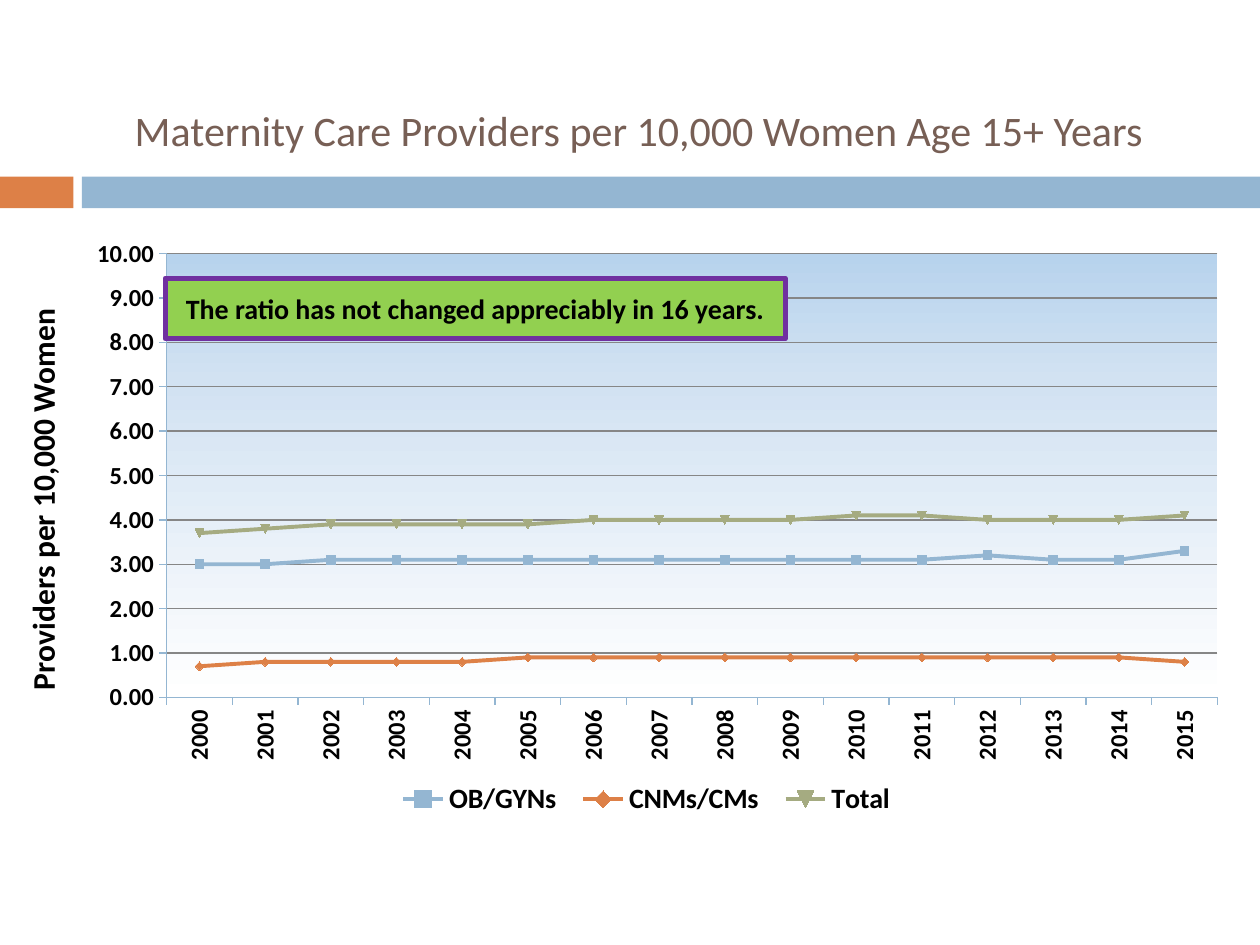
from dataclasses import dataclass

from pptx import Presentation
from pptx.chart.data import CategoryChartData
from pptx.dml.color import RGBColor
from pptx.enum.chart import XL_CHART_TYPE, XL_LEGEND_POSITION, XL_TICK_MARK
from pptx.enum.shapes import MSO_SHAPE
from pptx.enum.text import MSO_ANCHOR, PP_ALIGN
from pptx.oxml import parse_xml
from pptx.oxml.ns import nsdecls, qn
from pptx.util import Cm, Pt


@dataclass(frozen=True)
class Theme:
    font: str = "Calibri"
    title: str = "775F55"
    text: str = "000000"
    blue: str = "94B6D2"
    orange: str = "DD8047"
    olive: str = "A5AB81"
    grid: str = "868686"
    callout: str = "92D050"
    callout_line: str = "7030A0"
    plot_stops: tuple = ((0, "B7D3ED"), (29, "D2E2F2"), (100, "FFFFFF"))
    title_size: int = 24
    axis_title_size: int = 18
    body_size: int = 16
    tick_size: int = 14


@dataclass(frozen=True)
class Area:
    left: float
    top: float
    width: float
    height: float

    def lengths(self) -> tuple:
        return Cm(self.left), Cm(self.top), Cm(self.width), Cm(self.height)


@dataclass(frozen=True)
class Provider:
    name: str
    values: tuple
    color: str


THEME = Theme()
YEARS = [str(year) for year in range(2000, 2016)]
PROVIDERS = (
    Provider("OB/GYNs", (3, 3, *[3.1] * 10, 3.2, 3.1, 3.1, 3.3), THEME.blue),
    Provider("CNMs/CMs", (0.7, *[0.8] * 4, *[0.9] * 10, 0.8), THEME.orange),
    Provider("Total", (3.7, 3.8, *[3.9] * 4, *[4] * 4, 4.1, 4.1, *[4] * 3, 4.1), THEME.olive),
)


def rgb(color: str) -> RGBColor:
    return RGBColor.from_string(color)


def style_font(font, size: int, color: str = THEME.text, bold: bool = True) -> None:
    font.name, font.size, font.bold = THEME.font, Pt(size), bold
    font.color.rgb = rgb(color)


def style_line(line, color: str, width: float) -> None:
    line.color.rgb = rgb(color)
    line.width = Pt(width)


def add_bar(page, area: Area, color: str):
    bar = page.shapes.add_shape(MSO_SHAPE.RECTANGLE, *area.lengths())
    bar.shadow.inherit = False
    bar.fill.solid()
    bar.fill.fore_color.rgb = rgb(color)
    bar.line.fill.background()
    return bar


def set_text(box, text: str, size: int, color: str, bold: bool) -> None:
    frame = box.text_frame
    frame.text = text
    frame.word_wrap = True
    frame.vertical_anchor = MSO_ANCHOR.MIDDLE
    para = frame.paragraphs[0]
    para.alignment = PP_ALIGN.CENTER
    style_font(para.runs[0].font, size, color, bold)


def set_layout(parent, index: int, inner: bool, **fractions: float) -> None:
    """Place a chart part by fractions of the chart's size."""
    for old in parent.findall(qn("c:layout")):
        parent.remove(old)
    target = '<c:layoutTarget val="inner"/>' if inner else ""
    modes = '<c:xMode val="edge"/><c:yMode val="edge"/>'
    sizes = "".join(f'<c:{key} val="{value}"/>' for key, value in fractions.items())
    parent.insert(index, parse_xml(
        f'<c:layout {nsdecls("c")}><c:manualLayout>{target}{modes}{sizes}'
        "</c:manualLayout></c:layout>"))


def fill_plot(plot_area) -> None:
    stops = "".join(
        f'<a:gs pos="{percent * 1000}"><a:srgbClr val="{color}"/></a:gs>'
        for percent, color in THEME.plot_stops)
    plot_area.append(parse_xml(
        f'<c:spPr {nsdecls("c", "a")}><a:gradFill><a:gsLst>{stops}</a:gsLst>'
        '<a:lin ang="5400000" scaled="0"/></a:gradFill><a:ln><a:noFill/></a:ln></c:spPr>'))


def style_axis(axis) -> None:
    axis.major_tick_mark = XL_TICK_MARK.OUTSIDE
    axis.minor_tick_mark = XL_TICK_MARK.NONE
    style_font(axis.tick_labels.font, THEME.tick_size)
    style_line(axis.format.line, THEME.blue, 0.75)


def add_provider_chart(page, area: Area) -> None:
    data = CategoryChartData(number_format="0.0")
    data.categories = YEARS
    for provider in PROVIDERS:
        data.add_series(provider.name, provider.values)
    chart = page.shapes.add_chart(
        XL_CHART_TYPE.LINE_MARKERS, *area.lengths(), data).chart
    chart.has_title = False
    style_font(chart.font, THEME.axis_title_size, bold=False)
    chart.plots[0].vary_by_categories = False

    # Series
    for series, provider in zip(chart.plots[0].series, PROVIDERS):
        series.smooth = False
        style_line(series.format.line, provider.color, 2.25)
        series.marker.size = 5
        series.marker.format.fill.solid()
        series.marker.format.fill.fore_color.rgb = rgb(provider.color)
        series.marker.format.line.color.rgb = rgb(provider.color)

    # Axes
    years, ratio = chart.category_axis, chart.value_axis
    style_axis(years)
    years.tick_labels.font._element.getparent().getparent().getparent().find(
        qn("a:bodyPr")).set("rot", "-5400000")
    style_axis(ratio)
    ratio.minimum_scale, ratio.maximum_scale, ratio.major_unit = 0, 10, 1
    ratio.tick_labels.number_format = "#,##0.00"
    ratio.tick_labels.number_format_is_linked = False
    ratio.has_major_gridlines = True
    style_line(ratio.major_gridlines.format.line, THEME.grid, 0.75)
    caption = ratio.axis_title.text_frame
    caption.text = "Providers per 10,000 Women"
    style_font(caption.paragraphs[0].runs[0].font, THEME.axis_title_size)

    # Legend and plot area
    chart.has_legend = True
    legend = chart.legend
    legend.position = XL_LEGEND_POSITION.BOTTOM
    legend.include_in_layout = False
    style_font(legend.font, THEME.body_size)
    set_layout(legend._element, 1, False, x=0.31, y=0.92, w=0.42, h=0.07)
    plot_area = chart._chartSpace.chart.plotArea
    set_layout(plot_area, 0, True, x=0.134, y=0.045, w=0.845, h=0.74)
    fill_plot(plot_area)


def main() -> None:
    deck = Presentation()
    deck.slide_width, deck.slide_height = Cm(25.4), Cm(19.05)
    page = deck.slides.add_slide(deck.slide_layouts[6])

    # Title and divider
    add_bar(page, Area(0, 3.56, 1.48, 0.64), THEME.orange)
    add_bar(page, Area(1.65, 3.56, 23.75, 0.64), THEME.blue)
    title = page.shapes.add_textbox(*Area(0.36, 1.37, 25.04, 2.49).lengths())
    set_text(title, "Maternity Care Providers per 10,000 Women Age 15+ Years",
             THEME.title_size, THEME.title, False)

    # Chart and its message
    add_provider_chart(page, Area(0, 4.57, 25.07, 12.09))
    callout = add_bar(page, Area(3.33, 5.61, 12.5, 1.22), THEME.callout)
    style_line(callout.line, THEME.callout_line, 3)
    set_text(callout, "The ratio has not changed appreciably in 16 years.",
             THEME.body_size, THEME.text, True)

    deck.save("out.pptx")


if __name__ == "__main__":
    main()
